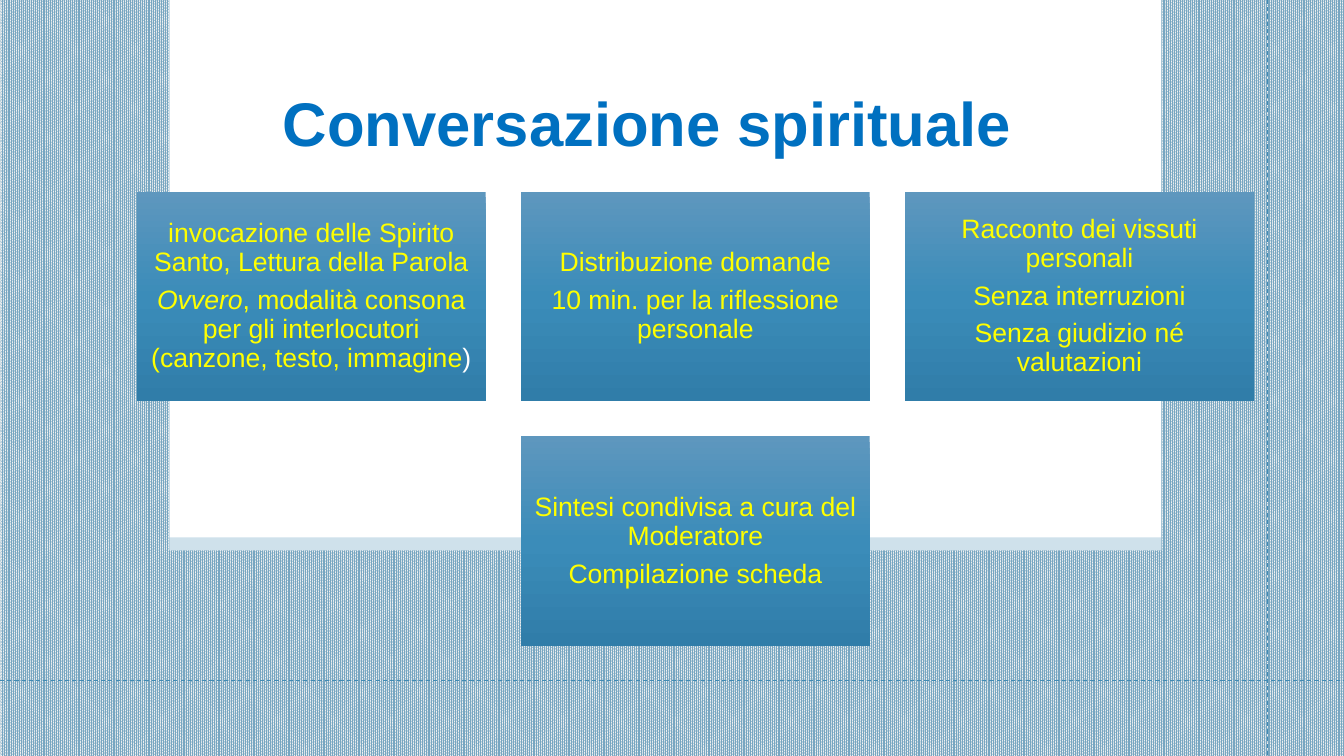
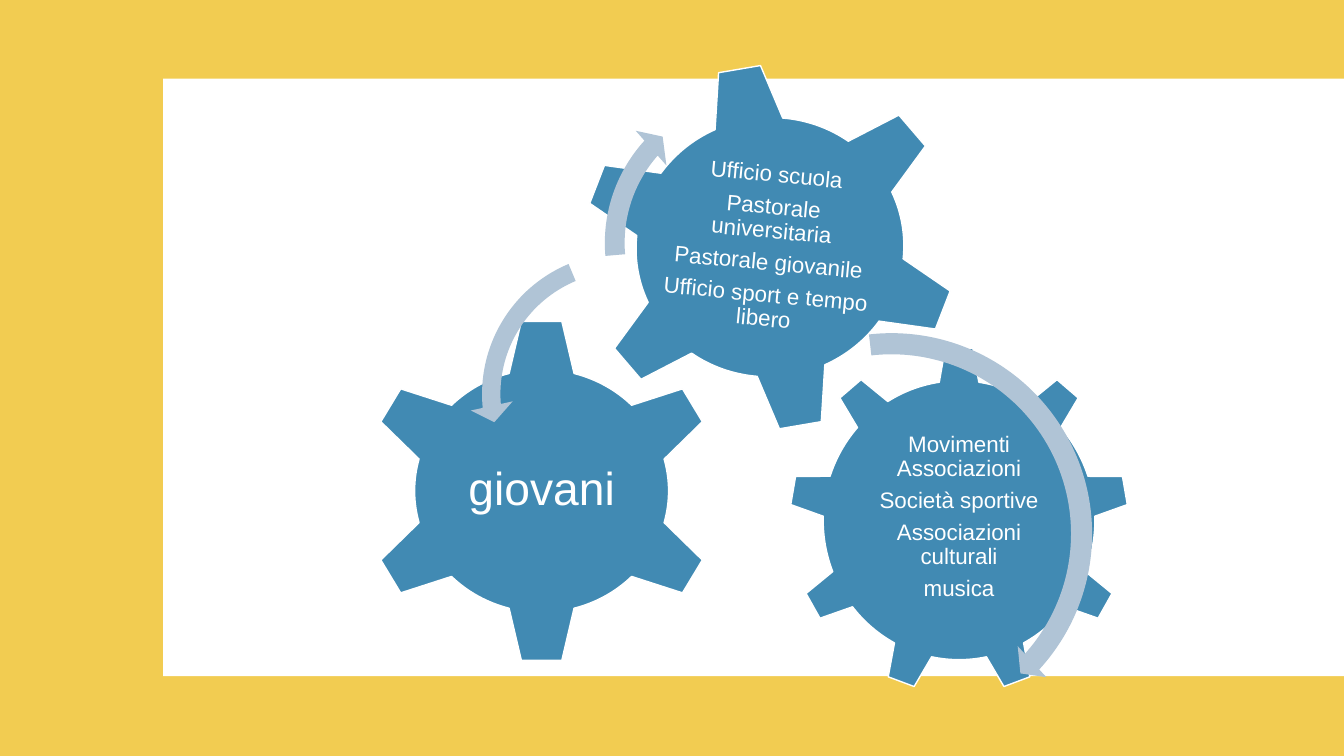
import dataclasses

import lxml.etree
import pptx
import pptx.dml.color
import pptx.enum.dml
import pptx.enum.shapes
import pptx.enum.text
import pptx.oxml.ns
import pptx.util

Cm = pptx.util.Cm
Pt = pptx.util.Pt
Shape = pptx.enum.shapes.MSO_SHAPE
Anchor = pptx.enum.text.MSO_ANCHOR
qn = pptx.oxml.ns.qn


@dataclasses.dataclass(frozen=True)
class Theme:
    font: str = "Arial"
    blue: str = "418AB3"
    white: str = "FFFFFF"
    veil: str = "DDDDDD"
    yellow_page: str = "FEC306"
    title: str = "0070C0"
    card_text: str = "FFFF00"
    card_gradient: tuple = ("5E97BE", "3B8CB9", "307DA9")
    arrow: str = "B0C4D6"
    title_size: int = 44
    card_size: int = 19
    gear_size: int = 16
    focus_size: int = 33
    line_spacing: float = 0.9
    paragraph_gap: float = 0.35


THEME = Theme()
PAGE_WIDTH, PAGE_HEIGHT = 33.87, 19.05


def rgb(value):
    return pptx.dml.color.RGBColor.from_string(value)


def lengths(box):
    return [Cm(value) for value in box]


def add_plain_shape(slide, kind, box, color, opacity=100):
    shape = slide.shapes.add_shape(kind, *lengths(box))
    shape.shadow.inherit = False
    shape.line.fill.background()
    shape.fill.solid()
    shape.fill.fore_color.rgb = rgb(color)
    if opacity < 100:
        color_element = shape.element.spPr.find(qn("a:solidFill")).find(qn("a:srgbClr"))
        alpha = lxml.etree.SubElement(color_element, qn("a:alpha"))
        alpha.set("val", str(opacity * 1000))
    return shape


def write_text(shape, lines, size, color, inset, anchor=Anchor.MIDDLE):
    frame = shape.text_frame
    frame.word_wrap = True
    frame.vertical_anchor = anchor
    frame.margin_left = frame.margin_right = Cm(inset)
    frame.margin_top = frame.margin_bottom = Cm(inset)
    frame.text = "\n".join(lines)
    for paragraph in frame.paragraphs:
        paragraph.alignment = pptx.enum.text.PP_ALIGN.CENTER
        paragraph.line_spacing = THEME.line_spacing
        paragraph.space_after = Pt(round(size * THEME.paragraph_gap, 1))
        for run in paragraph.runs:
            format_run(run, size, color)
    return frame


def format_run(run, size, color):
    run.font.name = THEME.font
    run.font.size = Pt(size)
    run.font.color.rgb = rgb(color)


def add_backdrop(slide, panel):
    add_plain_shape(slide, Shape.RECTANGLE, (0, 0, PAGE_WIDTH, PAGE_HEIGHT), THEME.veil, 35)
    add_plain_shape(slide, Shape.RECTANGLE, panel, THEME.white)


def add_dashed_line(slide, start, end):
    line = slide.shapes.add_connector(
        pptx.enum.shapes.MSO_CONNECTOR.STRAIGHT, *lengths(start + end)
    )
    line.line.color.rgb = rgb(THEME.blue)
    line.line.width = Pt(0.75)
    line.line.dash_style = pptx.enum.dml.MSO_LINE.DASH
    lxml.etree.SubElement(line.element.spPr, qn("a:effectLst"))


def add_title(slide, box, text):
    title = slide.shapes.add_textbox(*lengths(box))
    frame = write_text(title, [text], THEME.title_size, THEME.title, 0.13, Anchor.BOTTOM)
    frame.paragraphs[0].space_after = Pt(0)
    frame.paragraphs[0].runs[0].font.bold = True


def fill_with_gradient(shape, colors):
    shape.fill.gradient()
    shape.fill.gradient_angle = 270
    stop_list = shape.element.spPr.find(qn("a:gradFill")).find(qn("a:gsLst"))
    for element in list(stop_list)[2:]:
        stop_list.remove(element)
    lxml.etree.SubElement(stop_list, qn("a:gs")).set("pos", "100000")
    lxml.etree.SubElement(stop_list[2], qn("a:srgbClr")).set("val", colors[2])
    for index, (stop, color) in enumerate(zip(shape.fill.gradient_stops, colors)):
        stop.position = index / 2
        stop.color.rgb = rgb(color)


def add_card(slide, box, lines):
    card = add_plain_shape(slide, Shape.RECTANGLE, box, THEME.blue)
    fill_with_gradient(card, THEME.card_gradient)
    return write_text(card, lines, THEME.card_size, THEME.card_text, 0.2)


def split_runs(paragraph, parts):
    paragraph.runs[0].text = parts[0]
    runs = [paragraph.runs[0]]
    for part in parts[1:]:
        run = paragraph.add_run()
        run.text = part
        format_run(run, THEME.card_size, THEME.card_text)
        runs.append(run)
    return runs


def add_card_grid(slide, left, top):
    width, height, gap = 8.79, 5.28, 0.89
    opening = ["Ovvero", ", modalità consona per gli interlocutori (canzone, testo, immagine", ")"]
    cards = [
        (0, 0, ["invocazione delle Spirito Santo, Lettura della Parola", "".join(opening)]),
        (1, 0, ["Distribuzione domande", "10 min. per la riflessione personale"]),
        (2, 0, ["Racconto dei vissuti personali", "Senza interruzioni",
                "Senza giudizio né valutazioni"]),
        (1, 1, ["Sintesi condivisa a cura del Moderatore", "Compilazione scheda"]),
    ]
    frames = []
    for column, row, lines in cards:
        box = (left + column * (width + gap), top + row * (height + gap), width, height)
        frames.append(add_card(slide, box, lines))
    runs = split_runs(frames[0].paragraphs[1], opening)
    runs[0].font.italic = True
    runs[2].font.color.rgb = rgb(THEME.white)


def add_gear(slide, kind, box, text_size, lines, size, inset, turn=0, text_turn=0, lift=0):
    left, top, width, height = box
    gear = add_plain_shape(slide, kind, box, THEME.blue)
    gear.line.color.rgb = rgb(THEME.white)
    gear.line.width = Pt(1)
    gear.rotation = turn
    text_width, text_height = text_size
    text_box = (
        left + (width - text_width) / 2,
        top + (height - text_height) / 2 - lift,
        text_width,
        text_height,
    )
    label = slide.shapes.add_textbox(*lengths(text_box))
    label.rotation = text_turn
    write_text(label, lines, size, THEME.white, inset)


def add_turning_arrow(slide, kind, left, top, side, adjustments):
    arrow = add_plain_shape(slide, kind, (left, top, side, side), THEME.arrow)
    for index, value in enumerate(adjustments):
        arrow.adjustments[index] = value


def add_gear_train(slide, left, top):
    add_gear(
        slide, Shape.GEAR_9, (left + 10.75, top + 7.17, 8.56, 8.74), (5.11, 4.52),
        ["Movimenti Associazioni", "Società sportive", "Associazioni culturali", "musica"],
        THEME.gear_size, 0.05, lift=0.08,
    )
    add_gear(
        slide, Shape.GEAR_6, (left, top + 6.43, 9.02, 8.74), (4.55, 4.32),
        ["giovani"], THEME.focus_size, 0.13,
    )
    add_gear(
        slide, Shape.GEAR_6, (left + 5.49, top, 9.55, 9.32), (5.33, 5.26),
        ["Ufficio scuola", "Pastorale universitaria", "Pastorale giovanile",
         "Ufficio sport e tempo libero"],
        THEME.gear_size, 0.05, turn=350.3, text_turn=5.3,
    )
    arrows = [
        (Shape.CIRCULAR_ARROW, 8.01, 6.56, 10.64, (0.05, 2.99, 25.4, 158.12, 0.05)),
        (Shape.LEFT_CIRCULAR_ARROW, 2.7, 4.5, 7.72, (0.06, 4.3, 104.89, 148.38, 0.07)),
        (Shape.CIRCULAR_ARROW, 5.77, 0.39, 8.33, (0.06, 3.94, 133.14, 105.08, 0.07)),
    ]
    for kind, across, down, side, adjustments in arrows:
        add_turning_arrow(slide, kind, left + across, top + down, side, adjustments)


def build_conversation_slide(slide):
    fill = slide.background.fill
    fill.patterned()
    fill.pattern = pptx.enum.dml.MSO_PATTERN.PERCENT_90
    fill.fore_color.rgb = rgb(THEME.blue)
    fill.back_color.rgb = rgb(THEME.white)
    left, width, bottom, strip = 4.27, 25, 13.87, 0.33
    add_backdrop(slide, (left, 0, width, bottom))
    add_title(slide, (5.74, 1.17, 21.16, 3), "Conversazione spirituale")
    add_plain_shape(slide, Shape.RECTANGLE, (left, bottom - strip, width, strip), THEME.blue, 25)
    add_dashed_line(slide, (31.93, 0), (31.93, PAGE_HEIGHT))
    add_dashed_line(slide, (0, 17.15), (PAGE_WIDTH, 17.15))
    add_card_grid(slide, 3.45, 4.83)


def build_gears_slide(slide):
    slide.background.fill.solid()
    slide.background.fill.fore_color.rgb = rgb(THEME.yellow_page)
    add_backdrop(slide, (4.11, 1.98, PAGE_WIDTH - 4.11, 15.06))
    add_gear_train(slide, 9.14, 1.57)


def main():
    presentation = pptx.Presentation()
    presentation.slide_width = Cm(PAGE_WIDTH)
    presentation.slide_height = Cm(PAGE_HEIGHT)
    for build in (build_conversation_slide, build_gears_slide):
        build(presentation.slides.add_slide(presentation.slide_layouts[6]))
    presentation.save("out.pptx")


if __name__ == "__main__":
    main()
